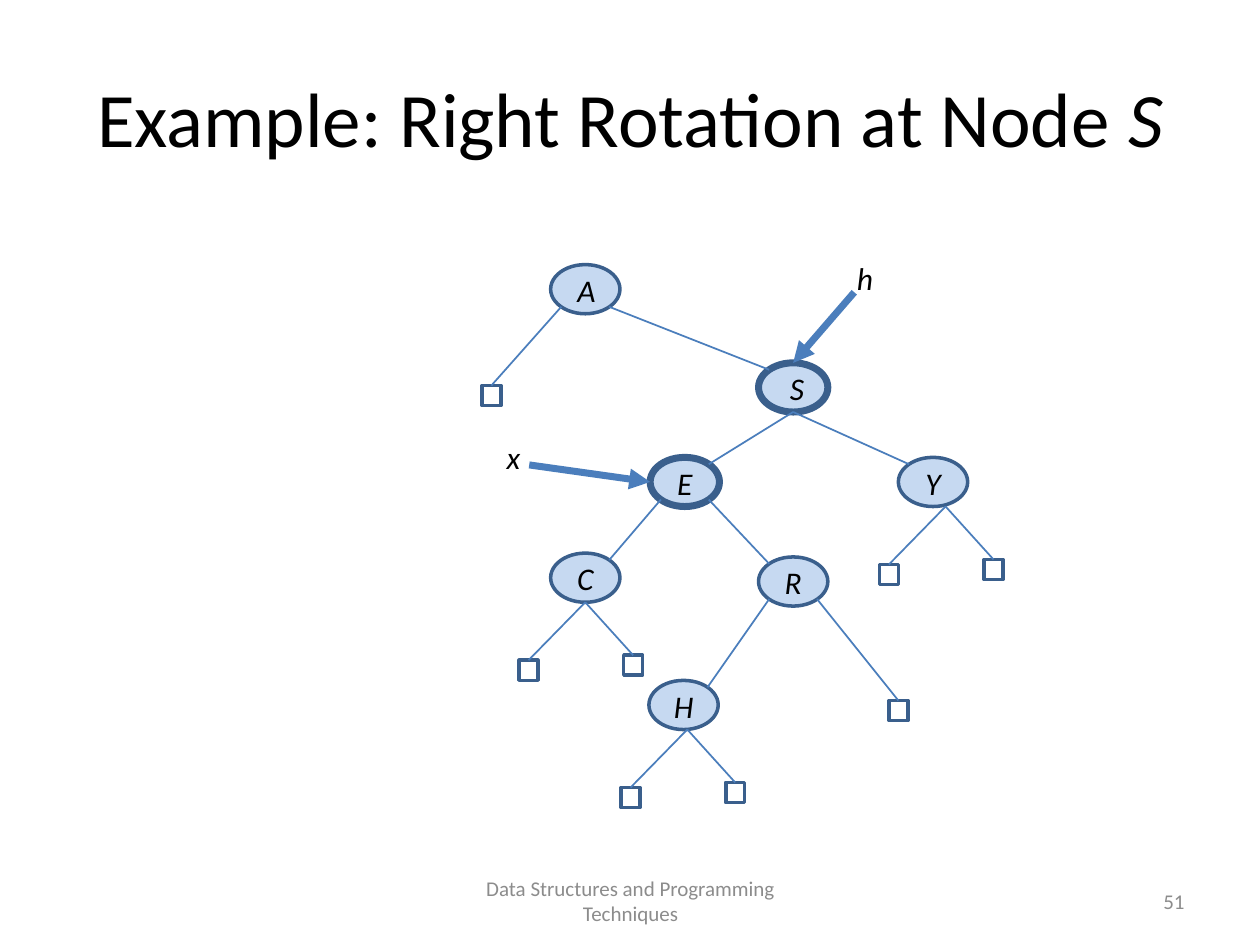
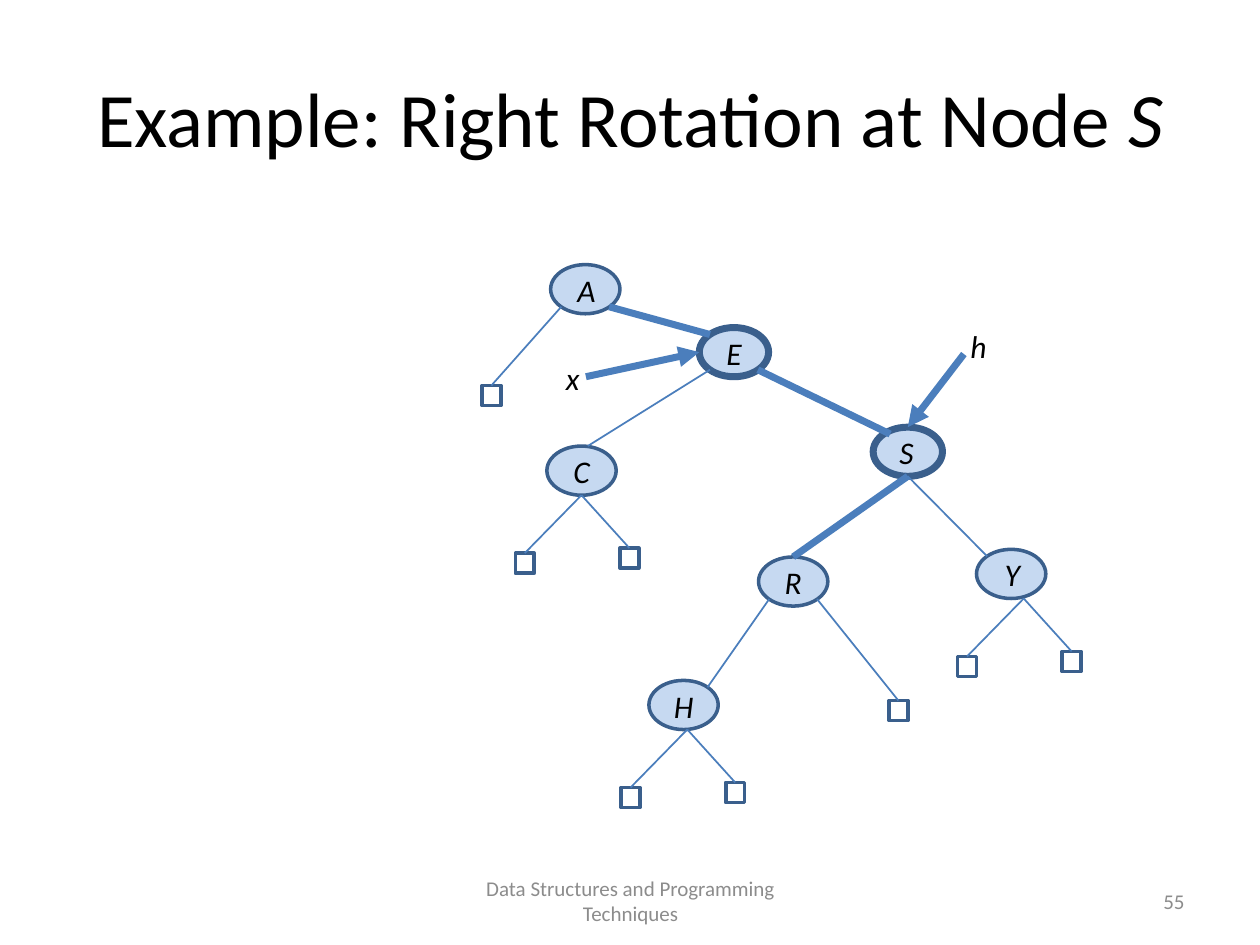
from pptx import Presentation
from pptx.dml.color import RGBColor
from pptx.enum.shapes import MSO_CONNECTOR as CONN, MSO_SHAPE as SHAPE
from pptx.enum.text import MSO_ANCHOR as ANCHOR, MSO_AUTO_SIZE as AUTO, PP_ALIGN as ALIGN
from pptx.oxml.ns import qn
from pptx.util import Inches, Pt
from lxml import etree

BLACK = RGBColor(0x00, 0x00, 0x00)
GRAY = RGBColor(0x8C, 0x8C, 0x8C)
NODE_FILL = RGBColor(0xC6, 0xD9, 0xF1)
OUTLINE = RGBColor(0x3A, 0x5F, 0x8C)
EDGE = RGBColor(0x4B, 0x7E, 0xBC)

NODE_W, NODE_H = 0.55, 0.39
LEAF_W, LEAF_H = 0.15, 0.16
THIN, NORMAL, THICK = 1, 2, 4

TITLE_FONT = {"name": "Calibri", "size": Pt(44)}
FOOTER_FONT = {"name": "Calibri", "size": Pt(12)}
LABEL_FONT = {"name": "Calibri", "size": Pt(18), "italic": True}
FOOTER_FRAME = {"word_wrap": True, "vertical_anchor": ANCHOR.MIDDLE}
LABEL_FRAME = {"word_wrap": True, "auto_size": AUTO.SHAPE_TO_FIT_TEXT}

SITES = {
    "top": (0, -0.195), "bottom": (0, 0.195), "left": (-0.275, 0),
    "top left": (-0.19, -0.14), "top right": (0.19, -0.14),
    "bottom left": (-0.19, 0.14), "bottom right": (0.19, 0.14),
}

SLIDES = [
    {
        "number": "51",
        "nodes": {
            "A": (4.37, 2.1, 0.01), "S": (6.02, 2.88, 0.03), "E": (5.16, 3.63, 0),
            "Y": (7.13, 3.63, 0), "C": (4.37, 4.39, 0), "R": (6.02, 4.42, 0),
            "H": (5.15, 5.4, 0),
        },
        "edges": [
            ("A", "bottom right", "S", "top left", THIN, 0),
            ("S", "bottom", "Y", "top left", THIN, 0),
            ("S", "bottom", "E", "top right", THIN, 0),
            ("R", "top left", "E", "bottom right", THIN, 0),
            ("C", "top right", "E", "bottom left", THIN, 0),
            ("H", "top right", "R", "bottom left", THIN, 0),
        ],
        "pointers": [
            ("x", 3.8, 3.43, "E", "left", 4.2, 3.69),
            ("h", 6.59, 2.01, "S", "top", 6.78, 2.32),
        ],
    },
    {
        "number": "55",
        "nodes": {
            "A": (4.37, 2.1, 0.01), "S": (6.93, 3.39, -0.01), "E": (5.55, 2.6, 0),
            "Y": (7.75, 4.36, 0.01), "C": (4.34, 3.54, 0), "R": (6.02, 4.42, 0),
            "H": (5.15, 5.4, 0),
        },
        "edges": [
            ("A", "bottom right", "E", "top left", THICK, 0),
            ("S", "top left", "E", "bottom right", THICK, 0.05),
            ("S", "bottom", "R", "top", THICK, 0),
            ("S", "bottom", "Y", "top left", THIN, 0),
            ("C", "top", "E", "bottom left", THIN, 0.05),
            ("H", "top right", "R", "bottom left", THIN, 0),
        ],
        "pointers": [
            ("x", 4.27, 2.8, "E", "left", 4.65, 2.99),
            ("h", 7.49, 2.55, "S", "top", 7.65, 2.81),
        ],
    },
]


def add_text(s, text, x, y, w, h, align, frame, font, color):
    sp = s.shapes.add_textbox(Inches(x), Inches(y), Inches(w), Inches(h))
    tf = sp.text_frame
    for name, value in frame.items():
        setattr(tf, name, value)
    p = tf.paragraphs[0]
    p.alignment = align
    r = p.add_run()
    r.text = text
    for name, value in font.items():
        setattr(r.font, name, value)
    r.font.color.rgb = color


def add_line(s, start, end, width):
    c = s.shapes.add_connector(CONN.STRAIGHT, *[Inches(v) for v in (*start, *end)])
    c.line.color.rgb = EDGE
    c.line.width = Pt(width)
    etree.SubElement(c._element.spPr, qn("a:effectLst"))
    return c


prs = Presentation()
prs.slide_width, prs.slide_height = Inches(10), Inches(7.5)

for slide in SLIDES:
    s = prs.slides.add_slide(prs.slide_layouts[5])
    title = s.shapes.title
    title.left, title.top, title.width, title.height = [Inches(v) for v in (0.5, 0.3, 9, 1.25)]
    tf = title.text_frame
    tf.vertical_anchor = ANCHOR.MIDDLE
    p = tf.paragraphs[0]
    p.alignment = ALIGN.CENTER
    for text, italic in (("Example: Right Rotation at Node ", False), ("S", True)):
        r = p.add_run()
        r.text = text
        for name, value in {**TITLE_FONT, "italic": italic}.items():
            setattr(r.font, name, value)
        r.font.color.rgb = BLACK

    add_text(s, "Data Structures and Programming Techniques", 3.42, 6.95, 3.17, 0.4,
             ALIGN.CENTER, FOOTER_FRAME, FOOTER_FONT, GRAY)
    add_text(s, slide["number"], 7.17, 6.95, 2.33, 0.4,
             ALIGN.RIGHT, FOOTER_FRAME, FOOTER_FONT, GRAY)

    points = {}
    for node, (x, y, shift) in slide["nodes"].items():
        sp = s.shapes.add_shape(SHAPE.OVAL, Inches(x), Inches(y), Inches(NODE_W), Inches(NODE_H))
        sp.shadow.inherit = False
        sp.fill.solid()
        sp.fill.fore_color.rgb = NODE_FILL
        sp.line.color.rgb = OUTLINE
        sp.line.width = Pt(THICK if node in "SE" else NORMAL)
        for site, (dx, dy) in SITES.items():
            points[node, site] = (x + NODE_W / 2 + dx, y + NODE_H / 2 + dy)

    for a, site_a, b, site_b, width, nudge in slide["edges"]:
        x, y = points[a, site_a]
        add_line(s, (x + nudge, y), points[b, site_b], width)

    leaves = [(points["A", "bottom left"], (3.9, 3.06)), (points["R", "bottom right"], (7.13, 5.56))]
    for node, shift in (("C", 0), ("H", 0.03), ("Y", 0.1)):
        x, y = points[node, "bottom"]
        x += shift
        leaves += [((x, y), (x + dx, y + dy)) for dx, dy in ((-0.45, 0.46), (0.38, 0.42))]
    for start, (x, y) in leaves:
        sp = s.shapes.add_shape(SHAPE.RECTANGLE, Inches(x - LEAF_W / 2), Inches(y),
                                Inches(LEAF_W), Inches(LEAF_H))
        sp.shadow.inherit = False
        sp.fill.background()
        sp.line.color.rgb = OUTLINE
        sp.line.width = Pt(NORMAL)
        add_line(s, start, (x, y), THIN).end_connect(sp, 0)

    labels = [(node, x + shift, y) for node, (x, y, shift) in slide["nodes"].items()]
    for text, x, y, node, site, tail_x, tail_y in slide["pointers"]:
        c = add_line(s, points[node, site], (tail_x, tail_y), THICK)
        etree.SubElement(c.line._get_or_add_ln(), qn("a:headEnd"), type="triangle")
        labels.append((text, x, y))
    for text, x, y in labels:
        add_text(s, text, x, y, 0.55, 0.4, ALIGN.CENTER, LABEL_FRAME, LABEL_FONT, BLACK)

prs.save("out.pptx")
